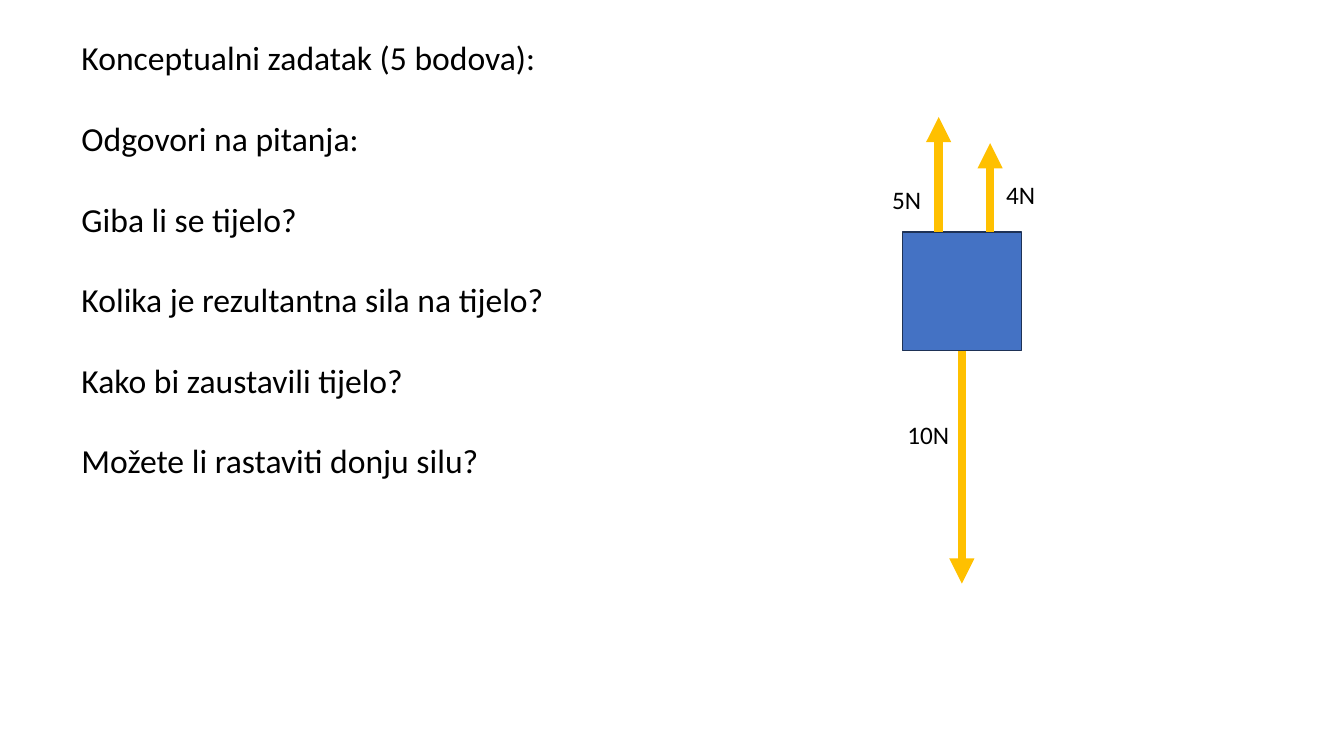
import pptx
import pptx.util
import pptx.dml.color
import pptx.enum.shapes
import pptx.enum.text
from dataclasses import dataclass
from lxml import etree
from pptx.util import Inches


@dataclass(frozen=True)
class Theme:
    font: str = "Calibri"
    text: str = "000000"
    body_fill: str = "4472C4"
    body_line: str = "1E3256"
    force: str = "FFC000"
    task_size: int = 24
    label_size: int = 18
    task_gap: float = 28.8
    body_line_width: int = 1
    force_width: int = 6


THEME = Theme()
DRAWING_NS = "{http://schemas.openxmlformats.org/drawingml/2006/main}"

TASK_LINES = [
    "Konceptualni zadatak (5 bodova):",
    "Odgovori na pitanja:",
    "Giba li se tijelo?",
    "Kolika je rezultantna sila na tijelo?",
    "Kako bi zaustavili tijelo?",
    "Možete li rastaviti donju silu?",
]

# Body square and the forces acting on its top and bottom edges
BODY_LEFT, BODY_TOP, BODY_SIDE = 8.95, 2.3, 1.18
BODY_BOTTOM = BODY_TOP + BODY_SIDE
# x, start, tip, label, label position and width
FORCES = [
    (9.31, BODY_TOP, 1.16, "5N", 8.75, 1.78, 0.49),
    (9.54, BODY_BOTTOM, 5.79, "10N", 8.9, 4.11, 0.62),
    (9.82, BODY_TOP, 1.42, "4N", 9.88, 1.73, 0.49),
]


def color(code):
    return pptx.dml.color.RGBColor.from_string(code)


def add_text(slide, lines, left, top, width, height, size, wrap=True, gap=0):
    frame = slide.shapes.add_textbox(
        Inches(left), Inches(top), Inches(width), Inches(height)
    ).text_frame
    frame.word_wrap = wrap
    frame.auto_size = pptx.enum.text.MSO_AUTO_SIZE.SHAPE_TO_FIT_TEXT
    frame.text = "\n".join(lines)
    for index, paragraph in enumerate(frame.paragraphs):
        if index and gap:
            paragraph.space_before = pptx.util.Pt(gap)
        paragraph.font.name = THEME.font
        paragraph.font.size = pptx.util.Pt(size)
        paragraph.font.color.rgb = color(THEME.text)


def add_body(slide):
    body = slide.shapes.add_shape(
        pptx.enum.shapes.MSO_SHAPE.RECTANGLE,
        Inches(BODY_LEFT), Inches(BODY_TOP), Inches(BODY_SIDE), Inches(BODY_SIDE),
    )
    body.shadow.inherit = False
    body.fill.solid()
    body.fill.fore_color.rgb = color(THEME.body_fill)
    body.line.color.rgb = color(THEME.body_line)
    body.line.width = pptx.util.Pt(THEME.body_line_width)


def add_force(slide, x, start, tip):
    force = slide.shapes.add_connector(
        pptx.enum.shapes.MSO_CONNECTOR.STRAIGHT,
        Inches(x), Inches(start), Inches(x), Inches(tip),
    )
    force.line.color.rgb = color(THEME.force)
    force.line.width = pptx.util.Pt(THEME.force_width)
    # Arrowhead at the tip, no shadow
    etree.SubElement(force.line._get_or_add_ln(), DRAWING_NS + "tailEnd", type="triangle")
    etree.SubElement(force._element.spPr, DRAWING_NS + "effectLst")


def main():
    presentation = pptx.Presentation()
    presentation.slide_width = Inches(13.33)
    presentation.slide_height = Inches(7.5)
    slide = presentation.slides.add_slide(presentation.slide_layouts[6])

    # Task and questions
    add_text(slide, TASK_LINES, 0.71, 0.32, 12.48, 4.54, THEME.task_size,
             gap=THEME.task_gap)

    # Force diagram
    add_body(slide)
    for x, start, tip, label, left, top, width in FORCES:
        add_force(slide, x, start, tip)
        add_text(slide, [label], left, top, width, 0.4, THEME.label_size, wrap=False)

    presentation.save("out.pptx")


if __name__ == "__main__":
    main()
